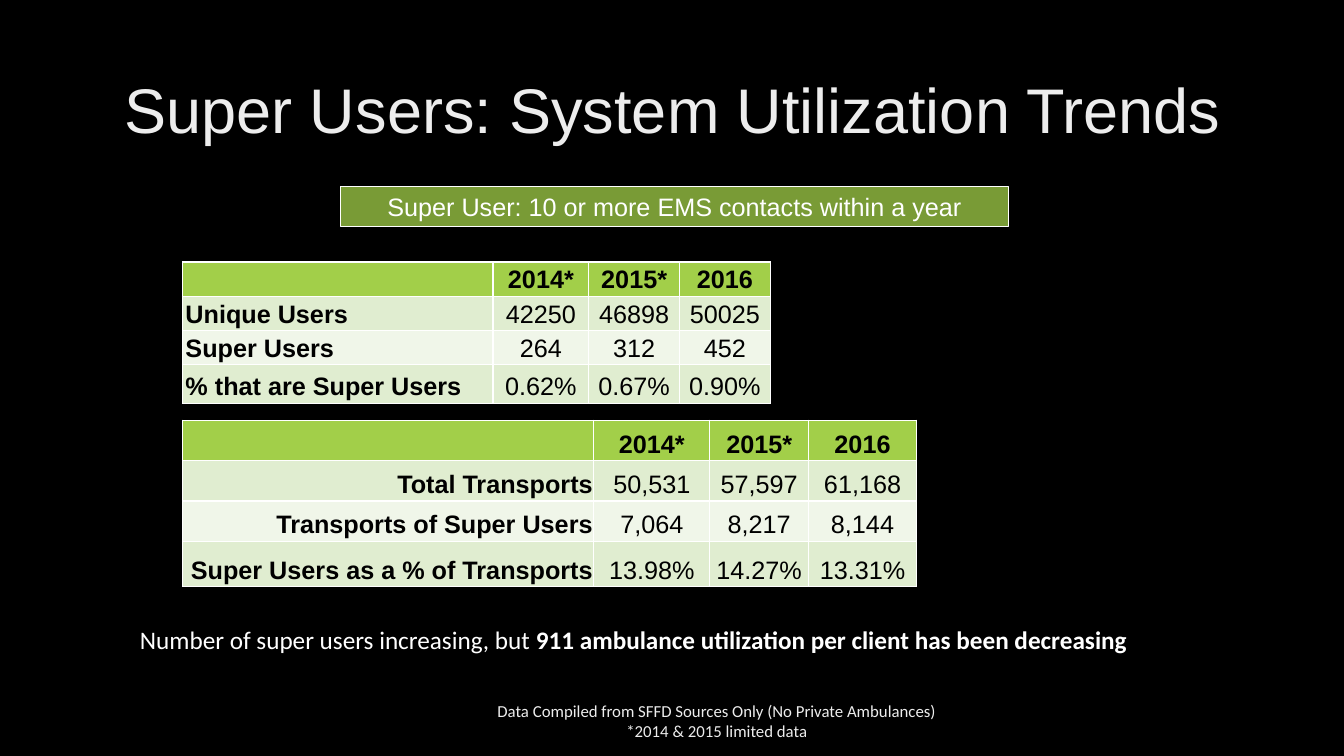
from lxml.etree import SubElement
from pptx import Presentation
from pptx.dml.color import RGBColor
from pptx.enum.shapes import MSO_SHAPE
from pptx.enum.text import MSO_ANCHOR, MSO_AUTO_SIZE, PP_ALIGN
from pptx.oxml.ns import qn
from pptx.util import Inches, Pt

COLORS = {
    "background": "000000",
    "title": "EDEDED",
    "white": "FFFFFF",
    "black": "000000",
    "header": "A2CF49",
    "odd_row": "E0EDD0",
    "even_row": "F0F6E9",
}


def color(name):
    return RGBColor.from_string(COLORS[name])


class SlideBuilder:
    """Holds the style and the current slide."""

    heading_font = "Arial"
    body_font = "Calibri"
    body_size = 18

    def __init__(self, presentation):
        self.slide = presentation.slides.add_slide(presentation.slide_layouts[5])
        background = self.slide.background.fill
        background.solid()
        background.fore_color.rgb = color("background")

    def style(self, paragraph, size, font_name, color_name, align, bold=False):
        paragraph.alignment = align
        font = paragraph.font
        font.size = Pt(size)
        font.name = font_name
        font.bold = bold
        font.color.rgb = color(color_name)

    def title(self, text, left, top, width, height):
        shape = self.slide.shapes.title
        shape.left, shape.top = Inches(left), Inches(top)
        shape.width, shape.height = Inches(width), Inches(height)
        frame = shape.text_frame
        frame.text = text
        frame.auto_size = MSO_AUTO_SIZE.NONE
        frame.vertical_anchor = MSO_ANCHOR.MIDDLE
        paragraph = frame.paragraphs[0]
        self.style(paragraph, 45, self.heading_font, "title", PP_ALIGN.CENTER)
        paragraph.line_spacing = 0.9

    def banner(self, text, left, top, width, height):
        shape = self.slide.shapes.add_shape(
            MSO_SHAPE.RECTANGLE, Inches(left), Inches(top), Inches(width), Inches(height))
        shape.shadow.inherit = False
        shape.fill.solid()
        shape.fill.fore_color.rgb = color("header")
        fill_color = shape.fill._xPr.find(qn("a:solidFill"))[0]
        SubElement(fill_color, qn("a:alpha"), val="75000")
        shape.line.color.rgb = color("white")
        shape.line.width = Pt(0.5)
        frame = shape.text_frame
        frame.text = text
        frame.word_wrap = True
        frame.vertical_anchor = MSO_ANCHOR.TOP
        self.style(frame.paragraphs[0], self.body_size, self.heading_font, "white",
                   PP_ALIGN.CENTER)

    def text(self, lines, left, top, width, height, size, color_name, align, anchor):
        """Each line is a list of (text, bold) runs."""
        box = self.slide.shapes.add_textbox(
            Inches(left), Inches(top), Inches(width), Inches(height))
        frame = box.text_frame
        frame.word_wrap = True
        frame.vertical_anchor = anchor
        for index, runs in enumerate(lines):
            paragraph = frame.add_paragraph() if index else frame.paragraphs[0]
            self.style(paragraph, size, self.body_font, color_name, align)
            for run_text, bold in runs:
                run = paragraph.add_run()
                run.text = run_text
                if bold:
                    run.font.bold = True

    def border(self, cell):
        properties = cell._tc.get_or_add_tcPr()
        for side in ("lnL", "lnR", "lnT", "lnB"):
            line = SubElement(properties, qn(f"a:{side}"), w=str(Pt(1)))
            fill = SubElement(line, qn("a:solidFill"))
            SubElement(fill, qn("a:srgbClr"), val=COLORS["white"])

    def table(self, rows, left, top, column_widths, row_heights, label_align, side_margin):
        table = self.slide.shapes.add_table(
            len(rows), len(column_widths), Inches(left), Inches(top),
            Inches(sum(column_widths)), Inches(sum(row_heights))).table
        for column, width in zip(table.columns, column_widths):
            column.width = Inches(width)
        for row, height in zip(table.rows, row_heights):
            row.height = Inches(height)
        for row_index, values in enumerate(rows):
            band = "odd_row" if row_index % 2 else "even_row"
            for column_index, value in enumerate(values):
                cell = table.cell(row_index, column_index)
                cell.text = value
                cell.vertical_anchor = MSO_ANCHOR.BOTTOM
                cell.margin_left = cell.margin_right = Inches(side_margin)
                cell.margin_top = cell.margin_bottom = Inches(0.02)
                self.border(cell)
                cell.fill.solid()
                cell.fill.fore_color.rgb = color(band if row_index else "header")
                self.style(cell.text_frame.paragraphs[0], self.body_size,
                           self.heading_font, "black",
                           PP_ALIGN.CENTER if column_index else label_align,
                           bold=row_index == 0 or column_index == 0)


def main():
    presentation = Presentation()
    presentation.slide_width = Inches(13.33)
    presentation.slide_height = Inches(7.5)
    builder = SlideBuilder(presentation)

    # Title and definition
    builder.title("Super Users: System Utilization Trends", 0.92, 0.4, 11.5, 1.45)
    builder.banner("Super User: 10 or more EMS contacts within a year",
                   3.38, 1.85, 6.62, 0.4)

    # Users and transports by year
    header = ["", "2014*", "2015*", "2016"]
    users = [
        header,
        ["Unique Users", "42250", "46898", "50025"],
        ["Super Users", "264", "312", "452"],
        ["% that are Super Users", "0.62%", "0.67%", "0.90%"],
    ]
    transports = [
        header,
        ["Total Transports", "50,531", "57,597", "61,168"],
        ["Transports of Super Users", "7,064", "8,217", "8,144"],
        ["Super Users as a % of Transports", "13.98%", "14.27%", "13.31%"],
    ]
    builder.table(users, 1.81, 2.6, [3.08, 0.95, 0.9, 0.9],
                  [0.34, 0.34, 0.34, 0.38], PP_ALIGN.LEFT, 0.03)
    builder.table(transports, 1.81, 4.17, [4.08, 1.15, 0.98, 1.07],
                  [0.4, 0.4, 0.4, 0.45], PP_ALIGN.RIGHT, 0.01)

    # Conclusion and data note
    conclusion = [[("Number of super users increasing, but ", False),
                   ("911 ambulance utilization per client has been decreasing", True)]]
    builder.text(conclusion, 1.29, 6.14, 10.3, 0.4, 18, "white",
                 PP_ALIGN.LEFT, MSO_ANCHOR.TOP)
    data_note = [[("Data Compiled from SFFD Sources Only (No Private Ambulances)", False)],
                 [("*2014 & 2015 limited data", False)]]
    builder.text(data_note, 4.42, 6.95, 5.38, 0.4, 12, "title",
                 PP_ALIGN.CENTER, MSO_ANCHOR.MIDDLE)

    presentation.save("out.pptx")


if __name__ == "__main__":
    main()
